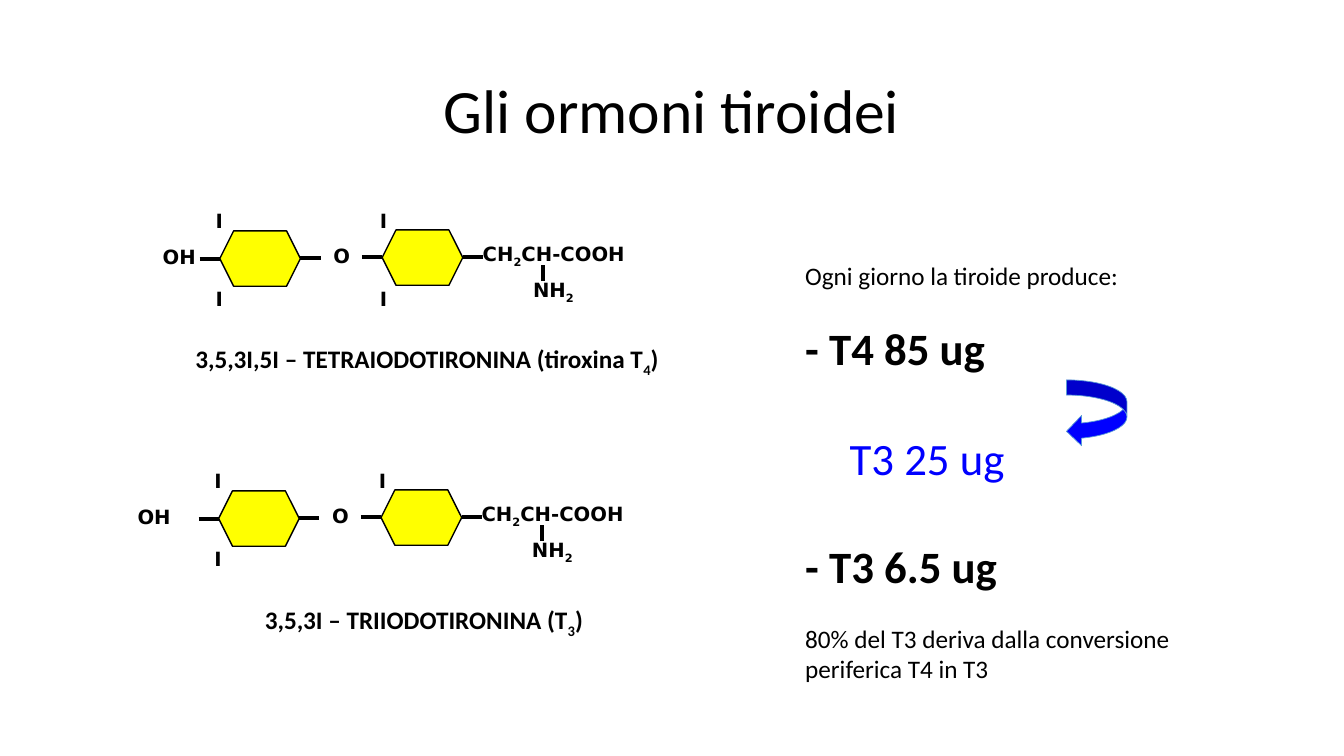
import pptx
import pptx.util
import pptx.dml.color
import pptx.enum.shapes
import pptx.enum.text
import pptx.oxml.ns
from lxml import etree

Pt = pptx.util.Pt
RGBColor = pptx.dml.color.RGBColor
SHAPE = pptx.enum.shapes.MSO_SHAPE
ALIGN = pptx.enum.text.PP_ALIGN
LEFT, CENTER = ALIGN.LEFT, ALIGN.CENTER

BLACK = RGBColor(0, 0, 0)
YELLOW = RGBColor(0xFF, 0xFF, 0)
BLUE = RGBColor(0, 0, 0xFF)
PALE_BLUE = RGBColor(0x5B, 0x9B, 0xD5)

# Content: in a list of runs, every second one is a subscript
TITLE = "Gli ormoni tiroidei"
CONVERTED = "T3 25 ug"
PRODUCTION = [  # text, size, bold, space before
    ("Ogni giorno la tiroide produce:", 18, False, 0),
    ("- T4 85 ug", 32, True, 22),
    ("- T3 6.5 ug", 32, True, 117.2),
    ("80% del T3 deriva dalla conversione periferica T4 in T3", 18, False, 22),
]

# Molecule parts, measured from the top left of the first ring
RING_WIDTH, RING_HEIGHT = 57.6, 39.6
RINGS = [(0, 0), (116, -0.7)]
BONDS = [  # x1, y1, x2, y2
    (-14.4, 20.2, 0, 20.2),
    (57.6, 19.4, 72, 19.4),
    (101.5, 18.7, 115.9, 18.7),
    (173.5, 18.7, 187.9, 18.7),
    (231.1, 36, 231.1, 24.5),
]
GROUPS = [  # runs, x, y, width, alignment
    (["O"], 51.1, 5.8, 72, CENTER),
    (["CH", "2", "CH-COOH"], 180.7, 4.3, 201.6, LEFT),
    (["NH", "2"], 216.7, 30.2, 72, LEFT),
]
IODINE_X, IODINE_Y = (-10.1, 107.3), (-19.4, 36.7)
MOLECULES = [
    dict(origin=(157, 164.9), hydroxyl=CENTER, iodine=[(0, 0), (0, 1), (1, 0), (1, 1)],
         caption=["3,5,3I,5I – TETRAIODOTIRONINA (tiroxina T", "4", ")"], caption_at=(70.6, 241.9)),
    dict(origin=(156.2, 350.6), hydroxyl=LEFT, iodine=[(0, 0), (0, 1), (1, 0)],
         caption=["3,5,3I – TRIIODOTIRONINA (T", "3", ")"], caption_at=(68.4, 428.4)),
]


def add_box(shapes, left, top, width, height):
    box = shapes.add_textbox(Pt(left), Pt(top), Pt(width), Pt(height))
    box.text_frame.word_wrap = True
    return box


def add_runs(para, runs, size, font="Calibri", bold=False, color=BLACK):
    for index, text in enumerate(runs):
        span = para.add_run()
        span.text = text
        span.font.name, span.font.size, span.font.bold = font, Pt(size), bold
        span.font.color.rgb = color
        if index % 2:
            span.font._element.set("baseline", "-25000")


def add_label(shapes, runs, left, top, width, height, align, size, **style):
    box = add_box(shapes, left, top, width, height)
    para = box.text_frame.paragraphs[0]
    para.alignment = align
    add_runs(para, runs, size, **style)
    return box


def add_figure(shapes, kind, left, top, width, height, fill, line, weight):
    figure = shapes.add_shape(kind, Pt(left), Pt(top), Pt(width), Pt(height))
    figure.shadow.inherit = False
    figure.fill.solid()
    figure.fill.fore_color.rgb = fill
    figure.line.color.rgb = line
    figure.line.width = Pt(weight)


def add_bond(shapes, x1, y1, x2, y2):
    bond = shapes.add_connector(pptx.enum.shapes.MSO_CONNECTOR.STRAIGHT,
                                Pt(x1), Pt(y1), Pt(x2), Pt(y2))
    bond.line.color.rgb = BLACK
    bond.line.width = Pt(3)
    etree.SubElement(bond._element.spPr, pptx.oxml.ns.qn("a:effectLst"))


def add_molecule(page, molecule):
    x, y = molecule["origin"]
    shapes = page.shapes.add_group_shape().shapes
    for dx, dy in RINGS:
        add_figure(shapes, SHAPE.HEXAGON, x + dx, y + dy, RING_WIDTH, RING_HEIGHT,
                   YELLOW, BLACK, 1)
    for x1, y1, x2, y2 in BONDS:
        add_bond(shapes, x + x1, y + y1, x + x2, y + y2)
    labels = GROUPS + [(["OH"], -65, 6.5, 72, molecule["hydroxyl"])]
    labels += [(["I"], IODINE_X[column], IODINE_Y[row], 34.6, LEFT)
               for column, row in molecule["iodine"]]
    for runs, dx, dy, width, align in labels:
        add_label(shapes, runs, x + dx, y + dy, width, 24.5, align, 14,
                  font="DejaVu Sans", bold=True)
    add_label(page.shapes, molecule["caption"], *molecule["caption_at"], 468.7, 28.8,
              CENTER, 18, bold=True)


def main():
    deck = pptx.Presentation()
    deck.slide_width, deck.slide_height = Pt(960), Pt(540)
    page = deck.slides.add_slide(deck.slide_layouts[6])

    # Title
    title = add_label(page.shapes, [TITLE], 66, 28.8, 828, 104.4, CENTER, 44)
    title.text_frame.vertical_anchor = pptx.enum.text.MSO_ANCHOR.MIDDLE
    title.text_frame.paragraphs[0].line_spacing = 0.9

    # The two hormones
    for molecule in MOLECULES:
        add_molecule(page, molecule)

    # Daily production
    frame = add_box(page.shapes, 568.1, 182.2, 344.2, 310.3).text_frame
    for index, (text, size, bold, gap) in enumerate(PRODUCTION):
        para = frame.add_paragraph() if index else frame.paragraphs[0]
        if gap:
            para.space_before = Pt(gap)
        add_runs(para, [text], size, bold=bold)

    # Conversion of T4 into T3
    add_figure(page.shapes, SHAPE.CURVED_LEFT_ARROW, 761.8, 271.4, 43.2, 47.5,
               BLUE, PALE_BLUE, 0.5)
    add_label(page.shapes, [CONVERTED], 599.8, 303.8, 218.2, 46.1, LEFT, 32, color=BLUE)

    deck.save("out.pptx")


if __name__ == "__main__":
    main()
